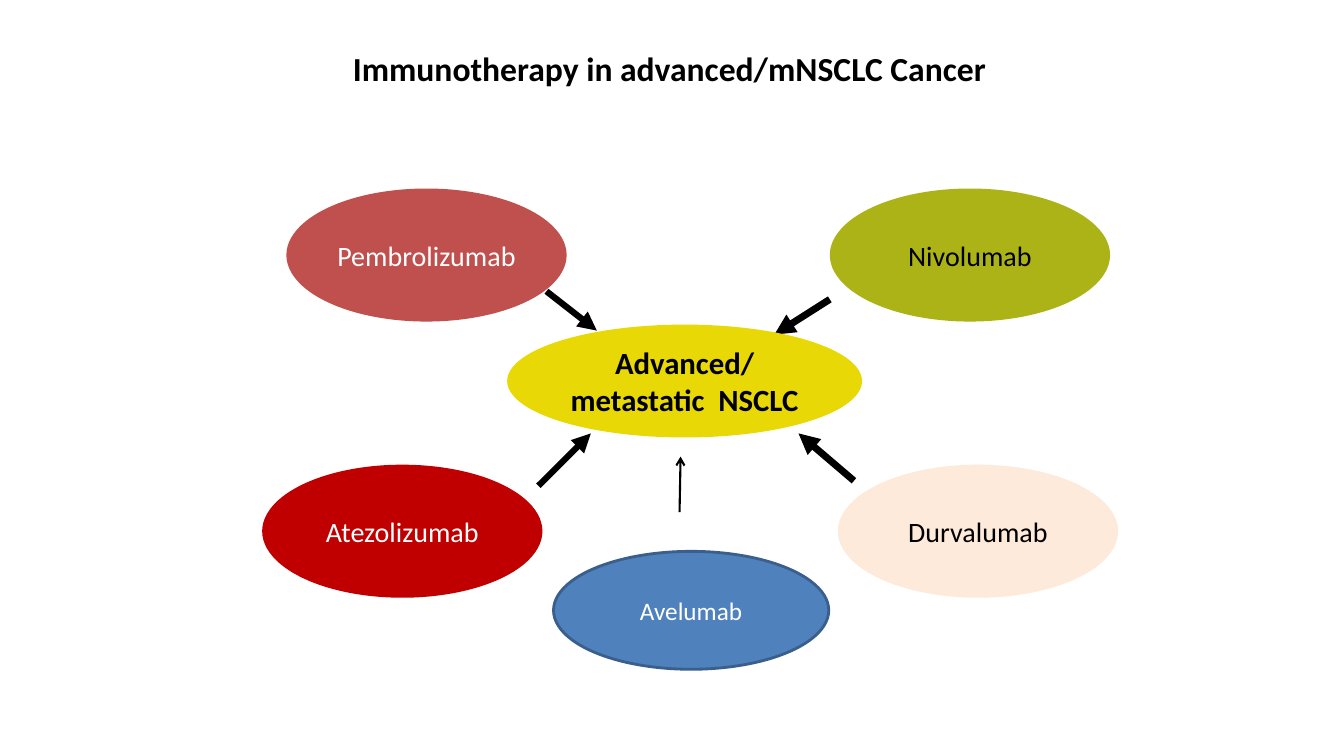
from lxml import etree
from pptx import Presentation
from pptx import util as u
from pptx.dml.color import RGBColor
from pptx.enum import shapes, text
from pptx.oxml.ns import qn

COLORS = {
    "black": "000000", "white": "FFFFFF", "peach": "FDEADA", "rose": "C0504D",
    "olive": "ACB317", "red": "C00000", "yellow": "E8D806", "blue": "4F81BD",
    "navy": "3A5F8C",
}
DRUG_W, DRUG_H = 2.78, 1.32
TOP_ROW, BOTTOM_ROW = 1.87, 4.61


def rgb(name):
    """Return the named colour."""
    return RGBColor.from_string(COLORS[name])


def write(tf, words, size=20, color="black", bold=False, wrap=True):
    """Put one centred, middle-anchored paragraph in a text frame."""
    tf.word_wrap = wrap
    tf.vertical_anchor = text.MSO_ANCHOR.MIDDLE
    p = tf.paragraphs[0]
    p.alignment = text.PP_ALIGN.CENTER
    r = p.add_run()
    r.text = words
    r.font.name = "Calibri"
    r.font.size = u.Pt(size)
    r.font.bold = bold
    r.font.color.rgb = rgb(color)


class Diagram:
    """Draws the elements of the current slide in one style."""

    def __init__(self, prs):
        self.s = prs.slides.add_slide(prs.slide_layouts[5])

    def title(self, words, box):
        """Place and format the title placeholder."""
        sp = self.s.shapes.title
        sp.left, sp.top, sp.width, sp.height = map(u.Inches, box)
        write(sp.text_frame, words, size=24, bold=True)

    def ellipse(self, words, box, fill, line=None, **fmt):
        """Add a filled ellipse with a label."""
        sp = self.s.shapes.add_shape(shapes.MSO_SHAPE.OVAL, *map(u.Inches, box))
        sp.shadow.inherit = False
        sp.fill.solid()
        sp.fill.fore_color.rgb = rgb(fill)
        if line:
            sp.line.color.rgb = rgb(line)
            sp.line.width = u.Pt(2)
        else:
            sp.line.fill.background()
        write(sp.text_frame, words, **fmt)

    def arrow(self, start, end, width, head="triangle"):
        """Add a straight black arrow pointing at its end."""
        c = self.s.shapes.add_connector(
            shapes.MSO_CONNECTOR.STRAIGHT, *map(u.Inches, start + end))
        c.line.color.rgb = rgb("black")
        c.line.width = u.Pt(width)
        etree.SubElement(c.line._get_or_add_ln(), qn("a:tailEnd"), type=head)
        etree.SubElement(c._element.spPr, qn("a:effectLst"))


def main():
    """Build the slide and save it."""
    prs = Presentation()
    prs.slide_width, prs.slide_height = u.Inches(13.33), u.Inches(7.5)
    d = Diagram(prs)
    d.title("Immunotherapy in advanced/mNSCLC Cancer", (2.3, 0.19, 8.68, 0.98))

    for start, end, width in (
        ((5.34, 4.82), (5.86, 4.3), 4.5),
        ((5.42, 2.89), (5.92, 3.28), 4.5),
        ((8.23, 2.97), (7.68, 3.32), 5),
        ((8.47, 4.77), (7.92, 4.3), 5),
    ):
        d.arrow(start, end, width)

    for drug, left, top, fill, color in (
        ("Durvalumab", 8.31, BOTTOM_ROW, "peach", "black"),
        ("Pembrolizumab", 2.84, TOP_ROW, "rose", "white"),
        ("Nivolumab", 8.23, TOP_ROW, "olive", "black"),
        ("Atezolizumab", 2.6, BOTTOM_ROW, "red", "white"),
    ):
        d.ellipse(drug, (left, top, DRUG_W, DRUG_H), fill, color=color, wrap=False)

    d.ellipse("Advanced/ metastatic  NSCLC", (5.03, 3.22, 3.52, 1.12), "yellow",
              size=22, bold=True)
    d.ellipse("Avelumab", (5.49, 5.47, 2.73, 1.17), "blue", line="navy",
              size=18, color="white")
    d.arrow((6.74, 5.08), (6.75, 4.53), 1.5, head="arrow")
    prs.save("out.pptx")


if __name__ == "__main__":
    main()
